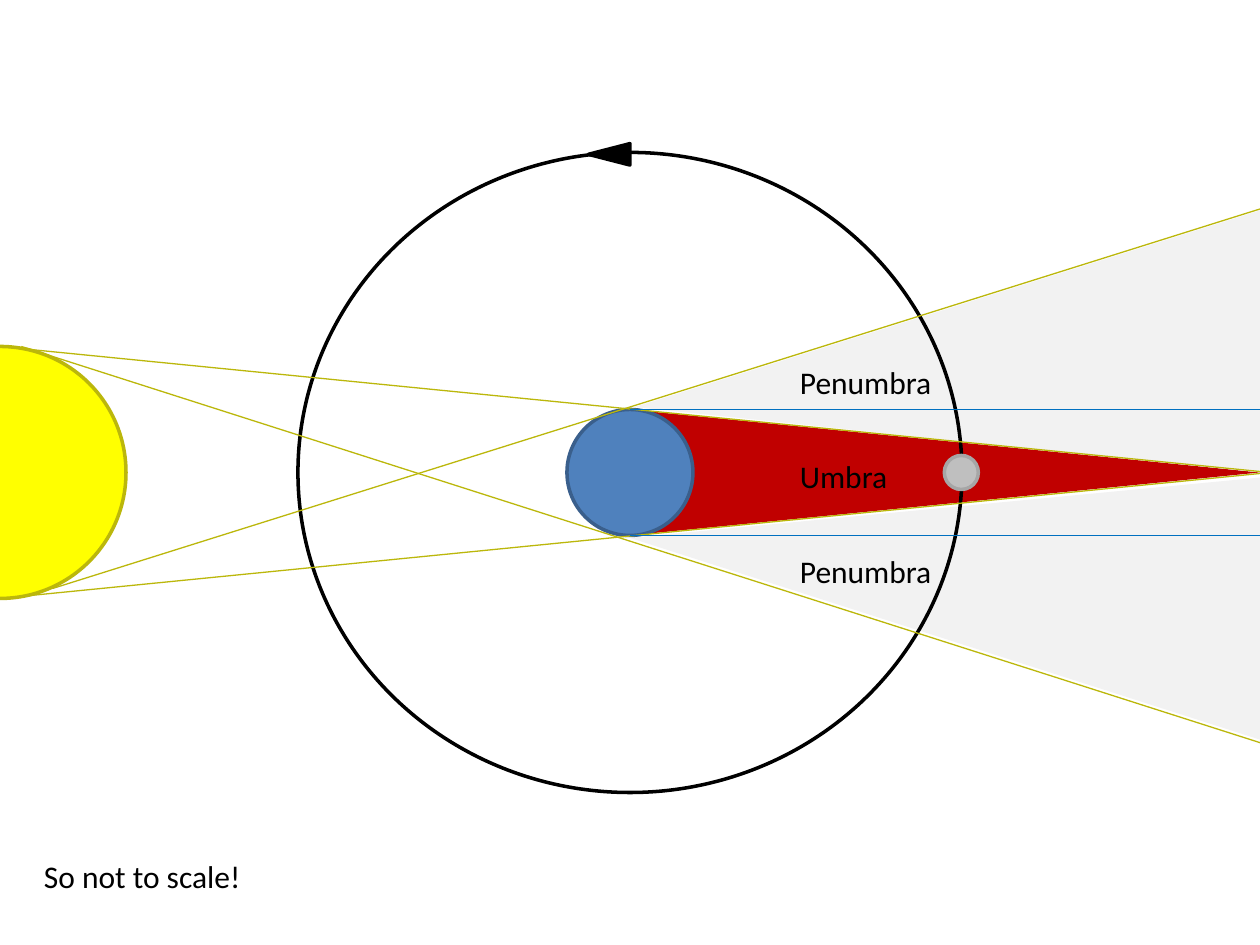
from lxml import etree
from pptx import Presentation
from pptx.dml.color import RGBColor
from pptx.enum.shapes import MSO_CONNECTOR, MSO_SHAPE
from pptx.enum.text import MSO_AUTO_SIZE
from pptx.oxml.ns import qn
from pptx.util import Inches, Pt

OVAL = MSO_SHAPE.OVAL
WEDGE = MSO_SHAPE.ISOSCELES_TRIANGLE
STRAIGHT = MSO_CONNECTOR.STRAIGHT
GROW = MSO_AUTO_SIZE.SHAPE_TO_FIT_TEXT

FRAME = {"word_wrap": True, "auto_size": GROW}
FONT = {"name": "Calibri", "size": Pt(18)}

BLACK = "000000"
GOLD = "BBB70B"
SHADE = "F2F2F2"


def color(text):
    return RGBColor.from_string(text)


def apply(item, values):
    for name, value in values.items():
        setattr(item, name, value)


def paint(shape, fill=None, line=None):
    shape.shadow.inherit = False
    if fill:
        shape.fill.solid()
        shape.fill.fore_color.rgb = color(fill)
    else:
        shape.fill.background()
    if line:
        shape.line.color.rgb = color(line)
        shape.line.width = Pt(2)
    else:
        shape.line.fill.background()


def add_oval(slide, box, fill, line):
    shape = slide.shapes.add_shape(OVAL, *map(Inches, box))
    paint(shape, fill, line)


def add_wedge(slide, box, turn, tip, fill, line=None):
    left, top, width, height = box
    shift = (width - height) / 2
    shape = slide.shapes.add_shape(
        WEDGE, Inches(left + shift), Inches(top - shift), Inches(height), Inches(width))
    shape.rotation = turn
    shape.adjustments[0] = tip
    paint(shape, fill, line)


def add_line(slide, start, end, tone):
    line = slide.shapes.add_connector(STRAIGHT, *map(Inches, start + end))
    line.line.color.rgb = color(tone)
    line.line.width = Pt(0.75)
    etree.SubElement(line._element.spPr, qn("a:effectLst"))


def add_label(slide, box, text):
    frame = slide.shapes.add_textbox(*map(Inches, box)).text_frame
    apply(frame, FRAME)
    run = frame.paragraphs[0].add_run()
    run.text = text
    apply(run.font, FONT)
    run.font.color.rgb = color(BLACK)


def add_shadow(slide, box):
    left, top, width, height = box
    mid = top + height / 2
    add_wedge(slide, (left, mid - 0.5, width, 1), 90, 0.5, "C00000")
    add_wedge(slide, (left + 0.04, mid - 2.08, width - 0.04, 2.08), 270, 0.25, SHADE)
    add_wedge(slide, (left, mid + 0.04, width, 2.08), 270, 0.77, SHADE)


def add_bodies(slide, box):
    left, top, width, height = box
    mid = top + height / 2
    bodies = [
        (5, 5.27, 5.08, None, BLACK),
        (5, 1, 1, "4F81BD", "3A5F8C"),
        (7.63, 0.27, 0.27, "BFBFBF", "A6A6A6"),
        (0, 2, 2, "FFFF00", GOLD),
    ]
    for x, wide, high, fill, line in bodies:
        add_oval(slide, (left + x - wide / 2, mid - high / 2, wide, high), fill, line)


def add_rays(slide, box):
    left, top, width, height = box
    mid = top + height / 2
    rays = [
        (0, -1, 10.08, 0, GOLD),
        (0, 1, 10.08, 0, GOLD),
        (0.42, 0.92, 10.25, -2.17, GOLD),
        (0.17, -1, 10.08, 2.17, GOLD),
        (5, -0.5, 10, -0.5, "0070C0"),
        (5, 0.5, 10, 0.5, "0070C0"),
    ]
    for x, y, far, end, tone in rays:
        add_line(slide, (left + x, mid + y), (left + far, mid + end), tone)


def add_names(slide, box):
    left, top, width, height = box
    for row, text in ((0, "Penumbra"), (2, "Penumbra"), (1, "Umbra")):
        add_label(slide, (left, top + row * 0.75, width, 0.42), text)


def main():
    deck = Presentation()
    deck.slide_width, deck.slide_height = Inches(10), Inches(7.5)
    slide = deck.slides.add_slide(deck.slide_layouts[6])
    page = (0, 0, 10, 7.5)
    add_shadow(slide, (5, 0, 5, 7.5))
    add_bodies(slide, page)
    add_rays(slide, page)
    add_wedge(slide, (4.67, 1.14, 0.33, 0.17), 270, 0.5, BLACK, BLACK)
    add_names(slide, (6.25, 2.83, 1.25, 1.92))
    add_label(slide, (0.25, 6.75, 3.25, 0.4), "So not to scale!")
    deck.save("out.pptx")


if __name__ == "__main__":
    main()
